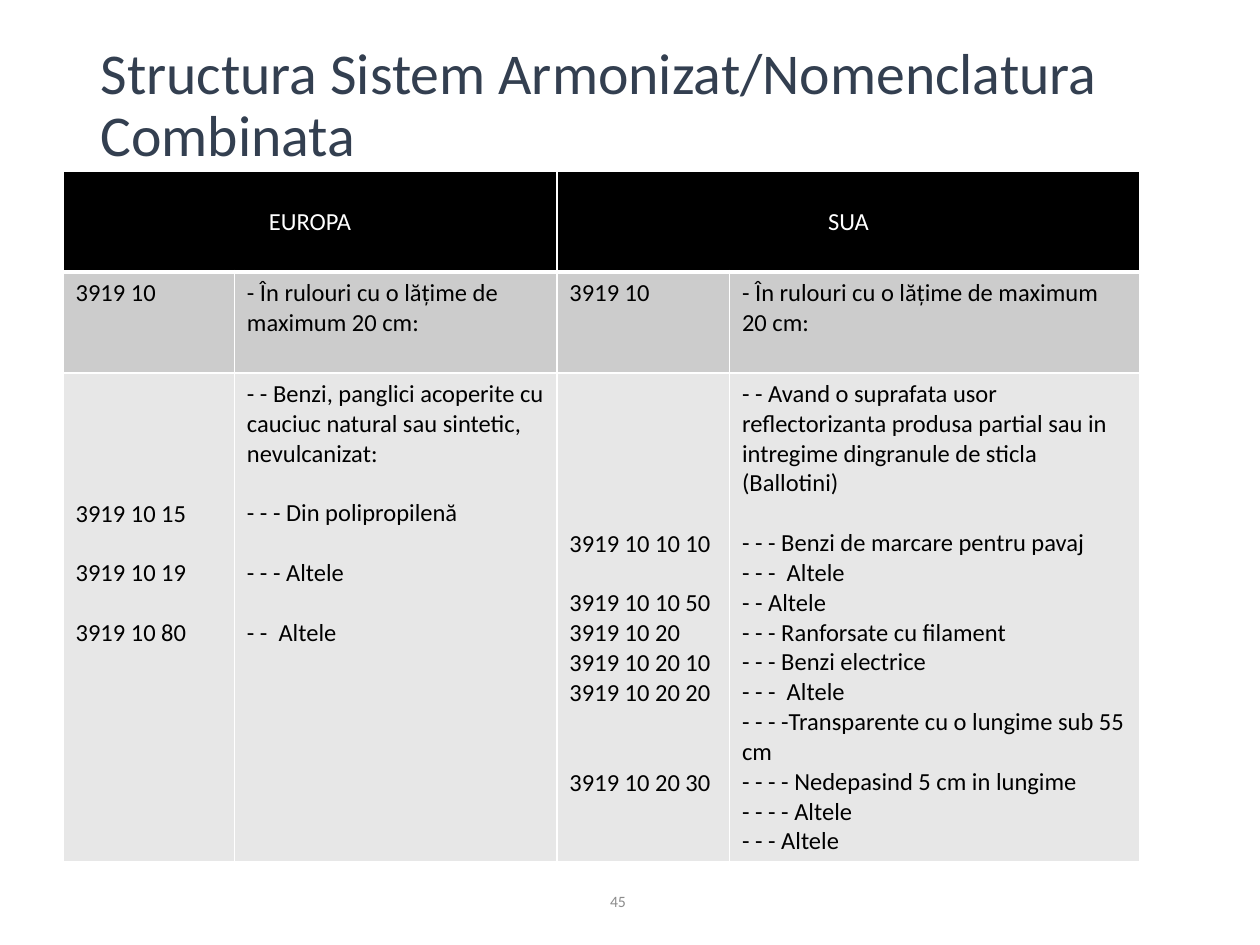
from lxml import etree
from pptx import Presentation
from pptx.dml.color import RGBColor
from pptx.enum.text import MSO_ANCHOR, PP_ALIGN
from pptx.oxml.ns import qn
from pptx.util import Inches, Pt

CENTER, LEFT = PP_ALIGN.CENTER, PP_ALIGN.LEFT
MIDDLE, TOP = MSO_ANCHOR.MIDDLE, MSO_ANCHOR.TOP
LINE_PT = 17.1  # height of one 14 pt line


def rgb(value):
    return RGBColor.from_string(value)


def write(frame, entries, size, color, align):
    """Write (lines of space above, text) entries; the first gap becomes top margin."""
    frame.word_wrap = True
    for i, (gap, text) in enumerate(entries):
        paragraph = frame.paragraphs[0] if i == 0 else frame.add_paragraph()
        paragraph.text = text
        paragraph.alignment = align
        if i and gap:
            paragraph.space_before = Pt(gap * LINE_PT)
        paragraph.font.name = "Calibri"
        paragraph.font.size = Pt(size)
        paragraph.font.bold = False
        paragraph.font.color.rgb = rgb(color)


prs = Presentation()
prs.slide_width, prs.slide_height = Inches(10), Inches(7.5)
slide = prs.slides.add_slide(prs.slide_layouts[6])

# Title and page number
for box, text, size, color, align in [
    ((0.7, 0.3, 8.71, 1.1), "Structura Sistem Armonizat/Nomenclatura Combinata", 33, "333F50", LEFT),
    ((4.24, 6.95, 1.33, 0.4), "45", 9, "8C8C8C", CENTER),
]:
    frame = slide.shapes.add_textbox(*map(Inches, box)).text_frame
    frame.vertical_anchor = MIDDLE
    write(frame, [(0, text)], size, color, align)
    frame.paragraphs[0].line_spacing = 0.9 if size == 33 else 1.0

# Tariff codes and descriptions, each with the lines of space above it
heading = [(0, "3919 10")]
rolls = [(0, "- În rulouri cu o lățime de maximum 20 cm:")]
europe_codes = [(4, "3919 10 15"), (1, "3919 10 19"), (1, "3919 10 80")]
europe_goods = [
    (0, "- - Benzi, panglici acoperite cu cauciuc natural sau sintetic, nevulcanizat:"),
    (1, "- - - Din polipropilenă"),
    (1, "- - - Altele"),
    (1, "- -  Altele"),
]
usa_codes = [
    (5, "3919 10 10 10"),
    (1, "3919 10 10 50"),
    (0, "3919 10 20"),
    (0, "3919 10 20 10"),
    (0, "3919 10 20 20"),
    (2, "3919 10 20 30"),
]
usa_goods = [
    (0, "- - Avand o suprafata usor reflectorizanta produsa partial sau in "
        "intregime dingranule de sticla (Ballotini)"),
    (1, "- - - Benzi de marcare pentru pavaj"),
    (0, "- - -  Altele"),
    (0, "- - Altele"),
    (0, "- - - Ranforsate cu filament"),
    (0, "- - - Benzi electrice"),
    (0, "- - -  Altele"),
    (0, "- - - -Transparente cu o lungime sub 55 cm"),
    (0, "- - - - Nedepasind 5 cm in lungime"),
    (0, "- - - - Altele"),
    (0, "- - - Altele"),
]
rows = [
    [[(0, "EUROPA")], [], [(0, "SUA")], []],
    [heading, rolls, heading, rolls],
    [europe_codes, europe_goods, usa_codes, usa_goods],
]
column_widths = [1.36, 2.56, 1.37, 3.26]
row_heights = [0.8, 0.8, 3.88]
row_fills = ["000000", "CCCCCC", "E7E7E7"]

# Comparison table
table = slide.shapes.add_table(
    3, 4, Inches(0.5), Inches(1.36), Inches(sum(column_widths)), Inches(sum(row_heights))
).table
table.first_row = table.horz_banding = False
for column, width in zip(table.columns, column_widths):
    column.width = Inches(width)
for first in (0, 2):
    table.cell(0, first).merge(table.cell(0, first + 1))

for r, (entries_in_row, height, fill) in enumerate(zip(rows, row_heights, row_fills)):
    table.rows[r].height = Inches(height)
    header = r == 0
    for c, entries in enumerate(entries_in_row):
        cell = table.cell(r, c)

        # White cell borders, thicker under the header
        properties = cell._tc.get_or_add_tcPr()
        for side in ("lnL", "lnR", "lnT", "lnB"):
            thick = (header and side == "lnB") or (r == 1 and side == "lnT")
            border = etree.SubElement(properties, qn(f"a:{side}"), w=str(Pt(3 if thick else 1)))
            solid = etree.SubElement(border, qn("a:solidFill"))
            etree.SubElement(solid, qn("a:srgbClr"), val="FFFFFF")
        cell.fill.solid()
        cell.fill.fore_color.rgb = rgb(fill)

        if entries:
            cell.vertical_anchor = MIDDLE if header else TOP
            cell.margin_top = Inches(0.05) + Pt(entries[0][0] * LINE_PT)
            write(cell.text_frame, entries, 14, "FFFFFF" if header else "000000",
                  CENTER if header else LEFT)

prs.save("out.pptx")
